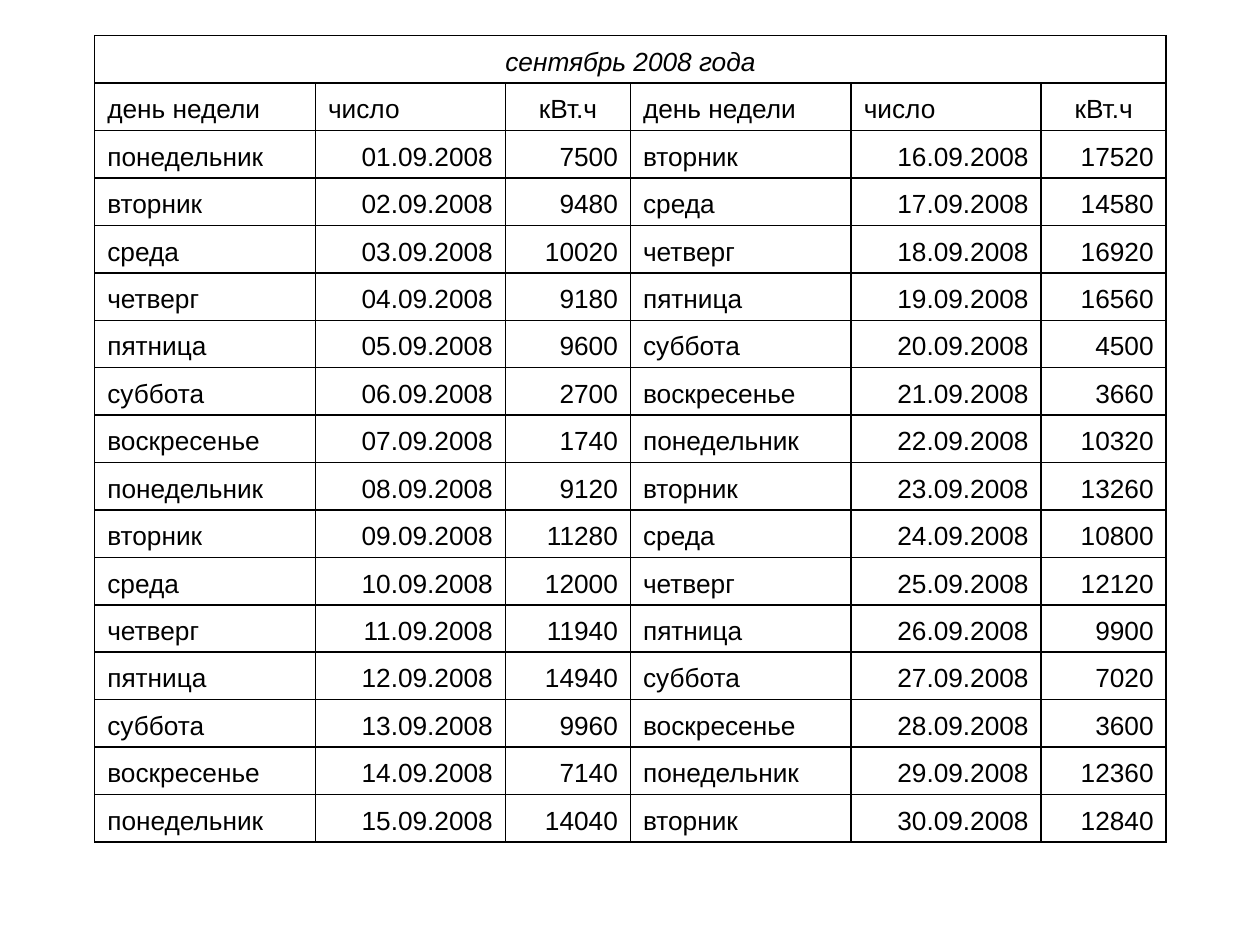
from lxml import etree
from pptx import Presentation
from pptx import util as u
from pptx.dml.color import RGBColor
from pptx.enum import text
from pptx.oxml import ns

BLACK = RGBColor(0x00, 0x00, 0x00)
LEFT, CENTER, RIGHT = text.PP_ALIGN.LEFT, text.PP_ALIGN.CENTER, text.PP_ALIGN.RIGHT

TITLE = "сентябрь 2008 года"
HEADINGS = ["день недели", "число", "кВт.ч"]
WEEKDAYS = ["понедельник", "вторник", "среда", "четверг",
            "пятница", "суббота", "воскресенье"]
CONSUMPTION = [
    7500, 9480, 10020, 9180, 9600, 2700, 1740, 9120, 11280, 12000,
    11940, 14940, 9960, 7140, 14040, 17520, 14580, 16920, 16560, 4500,
    3660, 10320, 13260, 10800, 12120, 9900, 7020, 3600, 12360, 12840,
]
HALF = len(CONSUMPTION) // 2


class SlideWriter:
    """Holds the table style and the current slide."""

    font_name = "Arial"
    font_size = u.Pt(15)
    color = BLACK
    border = u.Pt(1)
    indent = u.Cm(0.95)

    def __init__(self, page):
        self.page = page

    def table(self, left, top, widths, height, row_count):
        frame = self.page.shapes.add_table(
            row_count, len(widths), left, top, sum(widths), height)
        table = frame.table
        table.first_row = table.horz_banding = False
        for column, width in zip(table.columns, widths):
            column.width = width
        for row in table.rows:
            row.height = height // row_count
        for cell in table.iter_cells():
            self.borders(cell)
            cell.fill.background()
            cell.vertical_anchor = text.MSO_ANCHOR.BOTTOM
        return table

    def borders(self, cell):
        properties = cell._tc.get_or_add_tcPr()
        for side in ("lnL", "lnR", "lnT", "lnB"):
            line = etree.SubElement(properties, ns.qn(f"a:{side}"), w=str(self.border))
            fill = etree.SubElement(line, ns.qn("a:solidFill"))
            etree.SubElement(fill, ns.qn("a:srgbClr"), val=str(self.color))

    def cell_text(self, cell, content, align, italic=False):
        para = cell.text_frame.paragraphs[0]
        para.text = str(content)
        para.alignment = align
        # Hanging indent
        properties = para._p.get_or_add_pPr()
        properties.set("marL", str(self.indent))
        properties.set("indent", str(-self.indent))
        font = para.font
        font.name, font.size, font.italic = self.font_name, self.font_size, italic
        font.color.rgb = self.color


def main():
    deck = Presentation()
    deck.slide_width, deck.slide_height = u.Cm(25.4), u.Cm(19.05)
    writer = SlideWriter(deck.slides.add_slide(deck.slide_layouts[6]))

    # Grid: two halves of the month side by side
    widths = [u.Cm(4.45), u.Cm(3.83), u.Cm(2.52)] * 2
    table = writer.table(u.Cm(1.91), u.Cm(0.72), widths, u.Cm(16.26), HALF + 2)

    # Title row
    table.cell(0, 0).merge(table.cell(0, len(widths) - 1))
    writer.cell_text(table.cell(0, 0), TITLE, CENTER, italic=True)

    # Column headings
    for column, heading in enumerate(HEADINGS * 2):
        align = CENTER if heading == HEADINGS[-1] else LEFT
        writer.cell_text(table.cell(1, column), heading, align)

    # Daily readings; the month starts on a Monday
    for index, reading in enumerate(CONSUMPTION):
        half, row = divmod(index, HALF)
        values = [WEEKDAYS[index % 7], f"{index + 1:02}.09.2008", reading]
        for offset, (value, align) in enumerate(zip(values, [LEFT, RIGHT, RIGHT])):
            cell = table.cell(row + 2, half * len(HEADINGS) + offset)
            writer.cell_text(cell, value, align)

    deck.save("out.pptx")


if __name__ == "__main__":
    main()
